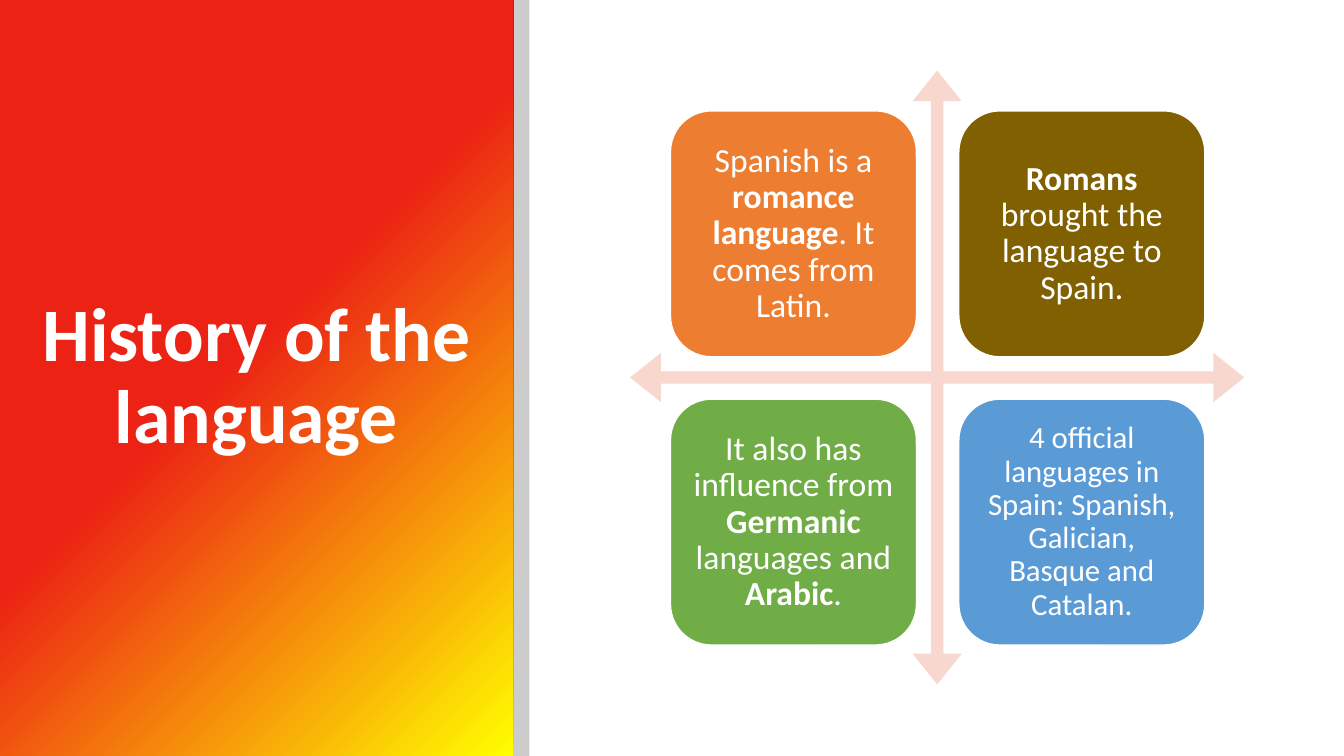
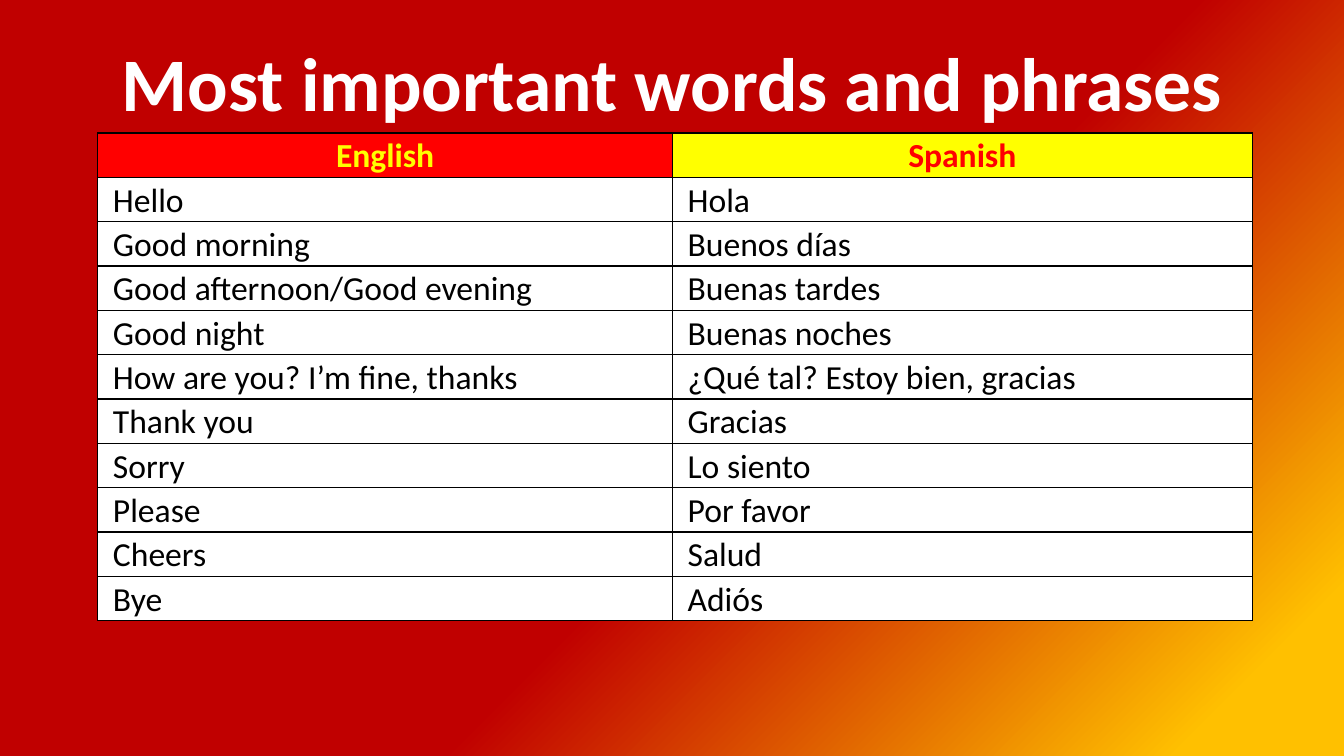
"""Build two slides on the Spanish language: its history and its key phrases."""
from dataclasses import dataclass

import lxml.etree
import pptx
import pptx.dml.color
import pptx.enum.shapes
import pptx.enum.text
import pptx.oxml.ns
import pptx.util

Inches = pptx.util.Inches
Pt = pptx.util.Pt
qn = pptx.oxml.ns.qn
SHAPE = pptx.enum.shapes.MSO_SHAPE
ALIGN = pptx.enum.text.PP_ALIGN
ANCHOR = pptx.enum.text.MSO_ANCHOR


@dataclass(frozen=True)
class Theme:
    font: str = "Calibri"
    title_size: int = 54
    body_size: int = 24
    small_size: int = 22
    white: str = "FFFFFF"
    black: str = "000000"
    red: str = "FF0000"
    yellow: str = "FFFF00"
    arrows: str = "F8D7CE"
    orange: str = "ED7D31"
    brown: str = "806000"
    green: str = "70AD47"
    blue: str = "5B9BD5"
    panel_gradient: tuple = ((0, "FFFF00"), (0.53, "EC2314"))
    page_gradient: tuple = ((0.08, "FFC000"), (0.43, "C00000"))
    gradient_angle: int = 135
    strip_opacity: int = 20


THEME = Theme()

HISTORY_TITLE = "History of the language"
HISTORY_FACTS = [
    (THEME.orange, THEME.body_size, [("Spanish is a ", False), ("romance language", True),
                                     (". It comes from Latin.", False)]),
    (THEME.brown, THEME.body_size, [("Romans ", True), ("brought the language to Spain.", False)]),
    (THEME.green, THEME.body_size, [("It also has influence from ", False), ("Germanic ", True),
                                    ("languages and ", False), ("Arabic", True), (".", False)]),
    (THEME.blue, THEME.small_size, [("4 official languages in Spain: Spanish, Galician, "
                                     "Basque and Catalan.", False)]),
]

PHRASES_TITLE = "Most important words and phrases"
PHRASES_HEADER = [("English", THEME.red, THEME.yellow), ("Spanish", THEME.yellow, THEME.red)]
PHRASES = [
    ("Hello", "Hola"),
    ("Good morning", "Buenos días"),
    ("Good afternoon/Good evening", "Buenas tardes"),
    ("Good night", "Buenas noches"),
    ("How are you? I’m fine, thanks", "¿Qué tal? Estoy bien, gracias"),
    ("Thank you", "Gracias"),
    ("Sorry", "Lo siento"),
    ("Please", "Por favor"),
    ("Cheers", "Salud"),
    ("Bye", "Adiós"),
]

SLIDE_WIDTH, SLIDE_HEIGHT = 13.33, 7.5
PANEL_WIDTH, STRIP_WIDTH = 5.09, 0.16
ARROWS_LEFT, ARROWS_TOP, ARROWS_SIZE = 6.25, 0.7, 6.09
CARD_SIZE, CARD_PITCH, CARD_OFFSET = 2.44, 2.86, 0.4
TABLE_LEFT, TABLE_TOP, ROW_HEIGHT = 0.97, 1.32, 0.44
COLUMN_WIDTHS = (5.7, 5.75)


def rgb(color):
    return pptx.dml.color.RGBColor.from_string(color)


def apply(target, values):
    for name, value in values.items():
        setattr(target, name, value)


def margins(horizontal, vertical):
    return {"margin_left": Inches(horizontal), "margin_right": Inches(horizontal),
            "margin_top": Inches(vertical), "margin_bottom": Inches(vertical)}


def paint(fill, color):
    fill.solid()
    fill.fore_color.rgb = rgb(color)


def paint_gradient(fill, stops):
    fill.gradient()
    fill.gradient_angle = THEME.gradient_angle
    for stop, (position, color) in zip(fill.gradient_stops, stops):
        stop.position = position
        stop.color.rgb = rgb(color)


def write(frame, runs, size, color, align=ALIGN.CENTER, spacing=0.9):
    paragraph = frame.paragraphs[0]
    apply(paragraph, {"alignment": align, "line_spacing": spacing})
    for text, bold in runs:
        run = paragraph.add_run()
        run.text = text
        apply(run.font, {"name": THEME.font, "size": Pt(size), "bold": bold})
        run.font.color.rgb = rgb(color)


def add_titled_slide(deck, text, box, anchor):
    slide = deck.slides.add_slide(deck.slide_layouts[5])
    title = slide.shapes.title
    apply(title, dict(zip(("left", "top", "width", "height"), map(Inches, box))))
    apply(title.text_frame, {"vertical_anchor": anchor, "word_wrap": True,
                             "auto_size": pptx.enum.text.MSO_AUTO_SIZE.NONE})
    write(title.text_frame, [(text, True)], THEME.title_size, THEME.white)
    return slide


def add_block(slide, kind, box, color):
    block = slide.shapes.add_shape(kind, *map(Inches, box))
    block.shadow.inherit = False
    paint(block.fill, color)
    block.line.fill.background()
    return block


def add_borders(cell):
    properties = cell._tc.get_or_add_tcPr()
    for side in ("a:lnL", "a:lnR", "a:lnT", "a:lnB"):
        border = lxml.etree.SubElement(properties, qn(side), w=str(Pt(1)))
        solid = lxml.etree.SubElement(border, qn("a:solidFill"))
        lxml.etree.SubElement(solid, qn("a:srgbClr"), val=THEME.black)


def build_history(deck):
    slide = add_titled_slide(deck, HISTORY_TITLE, (0, 0, PANEL_WIDTH, SLIDE_HEIGHT), ANCHOR.MIDDLE)
    paint_gradient(slide.shapes.title.fill, THEME.panel_gradient)

    strip = add_block(slide, SHAPE.RECTANGLE, (PANEL_WIDTH, 0, STRIP_WIDTH, SLIDE_HEIGHT), THEME.black)
    strip_color = strip._element.spPr.find(qn("a:solidFill"))[0]
    lxml.etree.SubElement(strip_color, qn("a:alpha"), val=str(THEME.strip_opacity * 1000))

    arrows = add_block(slide, SHAPE.QUAD_ARROW,
                       (ARROWS_LEFT, ARROWS_TOP, ARROWS_SIZE, ARROWS_SIZE), THEME.arrows)
    for index, ratio in enumerate((0.02, 0.04, 0.05)):
        arrows.adjustments[index] = ratio

    for index, (color, size, runs) in enumerate(HISTORY_FACTS):
        row, column = divmod(index, 2)
        card = add_block(slide, SHAPE.ROUNDED_RECTANGLE,
                         (ARROWS_LEFT + CARD_OFFSET + column * CARD_PITCH,
                          ARROWS_TOP + CARD_OFFSET + row * CARD_PITCH, CARD_SIZE, CARD_SIZE), color)
        card.line.color.rgb = rgb(THEME.white)
        card.line.width = Pt(1)
        apply(card.text_frame, {"word_wrap": True, "vertical_anchor": ANCHOR.MIDDLE,
                                **margins(0.1, 0.1)})
        write(card.text_frame, runs, size, THEME.white)


def build_phrases(deck):
    slide = add_titled_slide(deck, PHRASES_TITLE, (0.92, 0.3, 11.5, 1.02), ANCHOR.BOTTOM)
    paint_gradient(slide.background.fill, THEME.page_gradient)

    rows = [PHRASES_HEADER] + [[(text, THEME.white, THEME.black) for text in pair] for pair in PHRASES]
    table = slide.shapes.add_table(
        len(rows), len(COLUMN_WIDTHS), Inches(TABLE_LEFT), Inches(TABLE_TOP),
        Inches(sum(COLUMN_WIDTHS)), Inches(ROW_HEIGHT * len(rows))).table
    apply(table, {"first_row": True, "horz_banding": False})
    for column, width in zip(table.columns, COLUMN_WIDTHS):
        column.width = Inches(width)
    for row_index, row in enumerate(rows):
        table.rows[row_index].height = Inches(ROW_HEIGHT)
        header = row_index == 0
        for column_index, (text, background, color) in enumerate(row):
            cell = table.cell(row_index, column_index)
            apply(cell, margins(0.15, 0))
            add_borders(cell)
            paint(cell.fill, background)
            write(cell.text_frame, [(text, header)], THEME.body_size, color,
                  ALIGN.CENTER if header else ALIGN.LEFT, 1.07)


def main():
    deck = pptx.Presentation()
    apply(deck, {"slide_width": Inches(SLIDE_WIDTH), "slide_height": Inches(SLIDE_HEIGHT)})
    build_history(deck)
    build_phrases(deck)
    deck.save("out.pptx")


if __name__ == "__main__":
    main()
